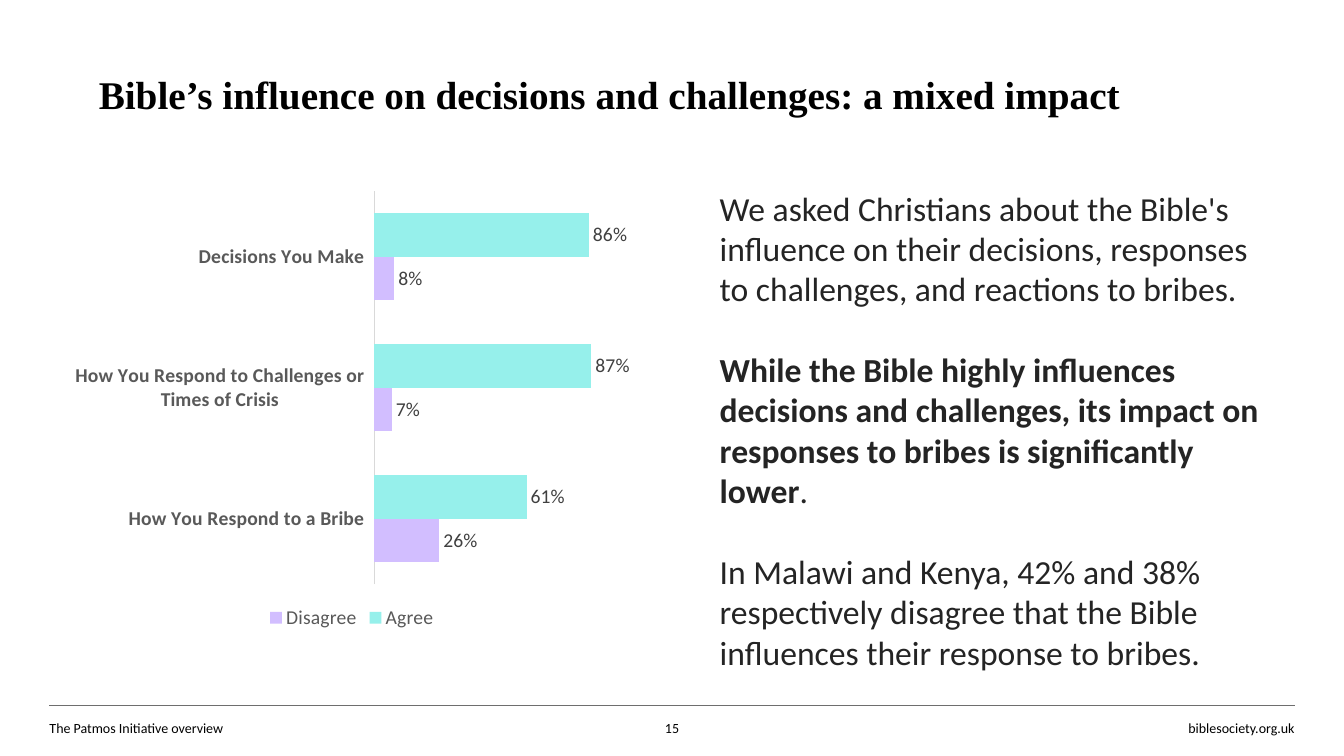
from lxml import etree
from pptx import Presentation
from pptx.chart.data import CategoryChartData
from pptx.dml.color import RGBColor
from pptx.enum.chart import XL_CHART_TYPE, XL_LABEL_POSITION, XL_LEGEND_POSITION, XL_TICK_LABEL_POSITION, XL_TICK_MARK
from pptx.enum.shapes import MSO_CONNECTOR
from pptx.enum.text import MSO_ANCHOR, PP_ALIGN
from pptx.oxml import parse_xml
from pptx.oxml.ns import nsdecls, qn
from pptx.util import Inches, Pt

WIDTH, HEIGHT = Inches(13.33), Inches(7.5)
BLACK = RGBColor(0x00, 0x00, 0x00)
BODY_INK = RGBColor(0x24, 0x24, 0x24)
LABEL_INK = RGBColor(0x40, 0x40, 0x40)
AXIS_INK = RGBColor(0x59, 0x59, 0x59)
RULE_GREY = RGBColor(0x6E, 0x6E, 0x6E)
AXIS_GREY = RGBColor(0xD9, 0xD9, 0xD9)
AQUA = RGBColor(0x96, 0xF0, 0xEB)
LILAC = RGBColor(0xD2, 0xBE, 0xFF)
SANS, SERIF = "Calibri", "Times New Roman"
LEFT, CENTER, RIGHT = PP_ALIGN.LEFT, PP_ALIGN.CENTER, PP_ALIGN.RIGHT
TOP, MIDDLE = MSO_ANCHOR.TOP, MSO_ANCHOR.MIDDLE
BAR_CLUSTERED = XL_CHART_TYPE.BAR_CLUSTERED
OUTSIDE_END = XL_LABEL_POSITION.OUTSIDE_END
LEGEND_BOTTOM = XL_LEGEND_POSITION.BOTTOM
NO_TICK = XL_TICK_MARK.NONE
LABELS_LOW = XL_TICK_LABEL_POSITION.LOW
STRAIGHT = MSO_CONNECTOR.STRAIGHT

MARGIN, FAR_MARGIN = 3.68, 96.32
CONTENT_TOP, RULE_TOP, FOOTER_TOP, FOOTER_HEIGHT = 24.13, 93.33, 95.2, 2.27
PLOT_AREA = {"x": 0.54, "y": 0.02, "w": 0.44, "h": 0.87}

CATEGORIES = [
    "Decisions You Make",
    "How You Respond to Challenges or Times of Crisis",
    "How You Respond to a Bribe",
]
ANSWERS = [
    ("Agree", (0.86, 0.87, 0.61), AQUA),
    ("Disagree", (0.08, 0.07, 0.26), LILAC),
]
FINDINGS = [
    [("We asked Christians about the Bible's influence on their decisions, "
      "responses to challenges, and reactions to bribes.", False)],
    [("While the Bible highly influences decisions and challenges, its impact "
      "on responses to bribes is significantly lower", True), (".", False)],
    [("In Malawi and Kenya, 42% and 38% respectively disagree that the Bible "
      "influences their response to bribes.", False)],
]


def across(percent):
    return round(WIDTH * percent / 100)


def down(percent):
    return round(HEIGHT * percent / 100)


def area(left, top, width, height):
    return across(left), down(top), across(width), down(height)


def style(font, size, color, name=SANS, bold=False):
    font.size, font.name, font.bold = Pt(size), name, bold
    font.color.rgb = color


def add_line_of_text(slide, text, place, size, align=LEFT, anchor=MIDDLE,
                     name=SANS, bold=False, wrap=True):
    frame = slide.shapes.add_textbox(*area(*place)).text_frame
    frame.margin_left = frame.margin_right = frame.margin_top = frame.margin_bottom = 0
    frame.word_wrap, frame.vertical_anchor = wrap, anchor
    paragraph = frame.paragraphs[0]
    paragraph.text, paragraph.alignment = text, align
    style(paragraph.font, size, BLACK, name, bold)


def add_findings(slide, place):
    frame = slide.shapes.add_textbox(*area(*place)).text_frame
    frame.word_wrap = True
    for index, finding in enumerate(FINDINGS):
        paragraph = frame.add_paragraph() if index else frame.paragraphs[0]
        if index:
            paragraph.space_before = Pt(29)
        style(paragraph.font, 24, BODY_INK)
        for text, bold in finding:
            run = paragraph.add_run()
            run.text, run.font.bold = text, bold


def add_rule(slide):
    rule = slide.shapes.add_connector(
        STRAIGHT, across(MARGIN), down(RULE_TOP), across(FAR_MARGIN), down(RULE_TOP))
    rule.line.color.rgb, rule.line.width = RULE_GREY, Pt(0.5)
    etree.SubElement(rule.element.spPr, qn("a:effectLst"))


def fix_plot_area(chart):
    shares = "".join(f'<c:{key} val="{share}"/>' for key, share in PLOT_AREA.items())
    layout = parse_xml(
        f'<c:layout {nsdecls("c")}><c:manualLayout><c:layoutTarget val="inner"/>'
        f'<c:xMode val="edge"/><c:yMode val="edge"/>{shares}</c:manualLayout></c:layout>')
    plot_area = chart.element.chart.plotArea
    for automatic in plot_area.findall(qn("c:layout")):
        plot_area.remove(automatic)
    plot_area.insert(0, layout)


def add_answers_chart(slide, place):
    answers = CategoryChartData(number_format="0%")
    answers.categories = CATEGORIES
    for name, shares, _ in ANSWERS:
        answers.add_series(name, shares)
    chart = slide.shapes.add_chart(BAR_CLUSTERED, *area(*place), answers).chart
    style(chart.font, 10, BLACK)
    chart.has_title = False
    chart.has_legend = True
    chart.legend.position = LEGEND_BOTTOM
    chart.legend.include_in_layout = False
    style(chart.legend.font, 14, AXIS_INK)

    topics = chart.category_axis
    topics.reverse_order = True
    topics.major_tick_mark = topics.minor_tick_mark = NO_TICK
    topics.tick_label_position = LABELS_LOW
    topics.format.line.color.rgb, topics.format.line.width = AXIS_GREY, Pt(0.75)
    style(topics.tick_labels.font, 14, AXIS_INK, bold=True)

    scale = chart.value_axis
    scale.minimum_scale, scale.maximum_scale = 0, 1
    scale.has_major_gridlines = False
    scale.visible = False

    bars = chart.plots[0]
    bars.gap_width, bars.overlap, bars.vary_by_categories = 100, 0, False
    for series, (_, _, color) in zip(bars.series, ANSWERS):
        series.format.fill.solid()
        series.format.fill.fore_color.rgb = color
        labels = series.data_labels
        labels.show_value, labels.position = True, OUTSIDE_END
        labels.number_format, labels.number_format_is_linked = "0%", False
        style(labels.font, 14, LABEL_INK)
    fix_plot_area(chart)


def main():
    deck = Presentation()
    deck.slide_width, deck.slide_height = WIDTH, HEIGHT
    slide = deck.slides.add_slide(deck.slide_layouts[6])
    add_line_of_text(slide, "biblesociety.org.uk", (88.3, FOOTER_TOP, 8.02, FOOTER_HEIGHT),
                     10, RIGHT, TOP, wrap=False)
    add_rule(slide)
    add_line_of_text(slide, "Bible’s influence on decisions and challenges: a mixed impact",
                     (7.35, 9.33, 79.74, 6.27), 28, name=SERIF, bold=True)
    add_line_of_text(slide, "The Patmos Initiative overview",
                     (MARGIN, FOOTER_TOP, 33.76, FOOTER_HEIGHT), 10)
    add_line_of_text(slide, "15", (48.39, FOOTER_TOP, 3.23, FOOTER_HEIGHT), 10, CENTER)
    add_findings(slide, (52.81, CONTENT_TOP, 43.06, 66))
    add_answers_chart(slide, (5.1, CONTENT_TOP, 42.16, 59.73))
    deck.save("out.pptx")


if __name__ == "__main__":
    main()
